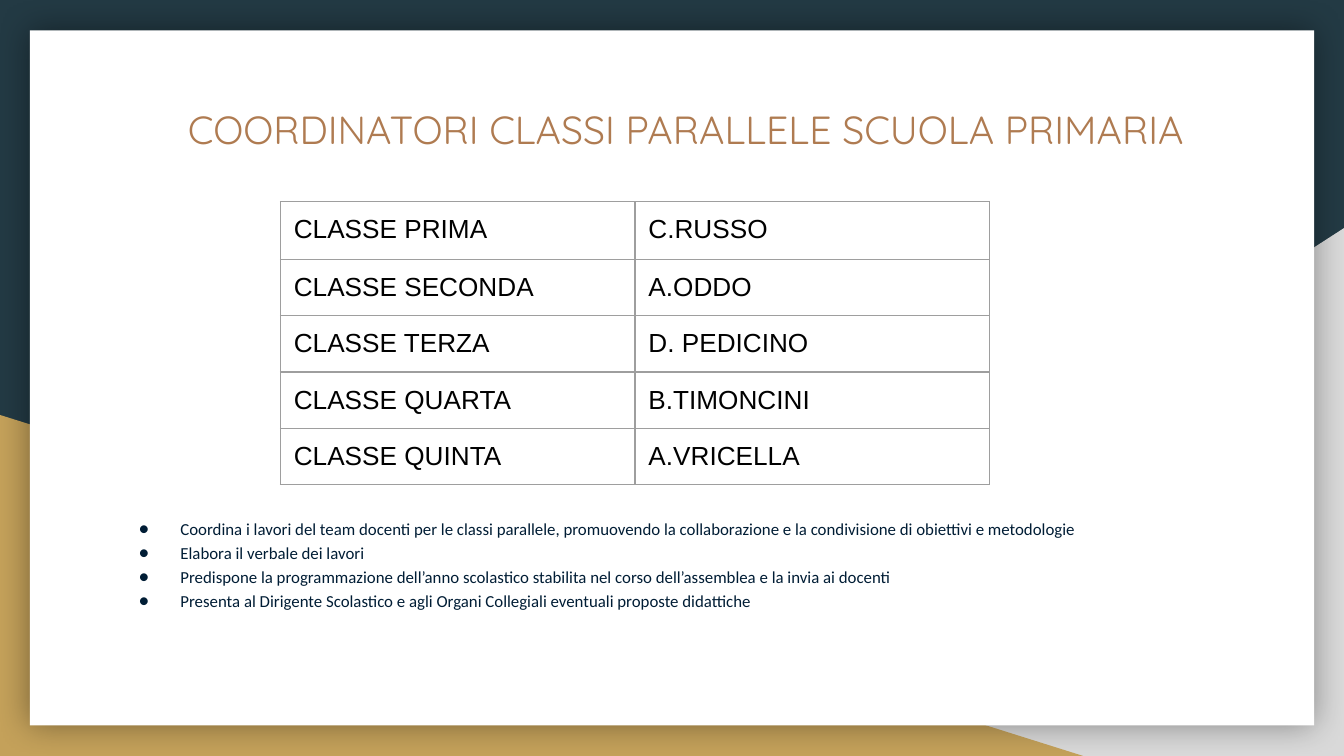
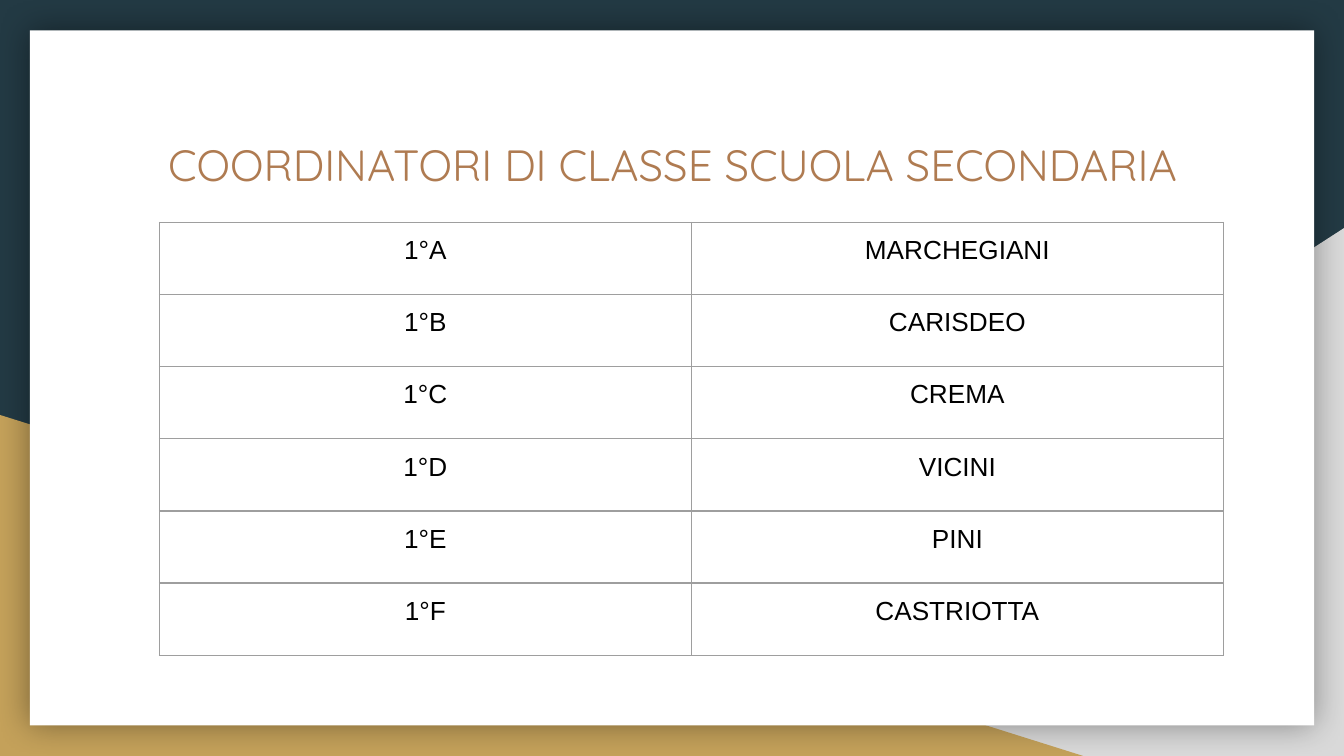
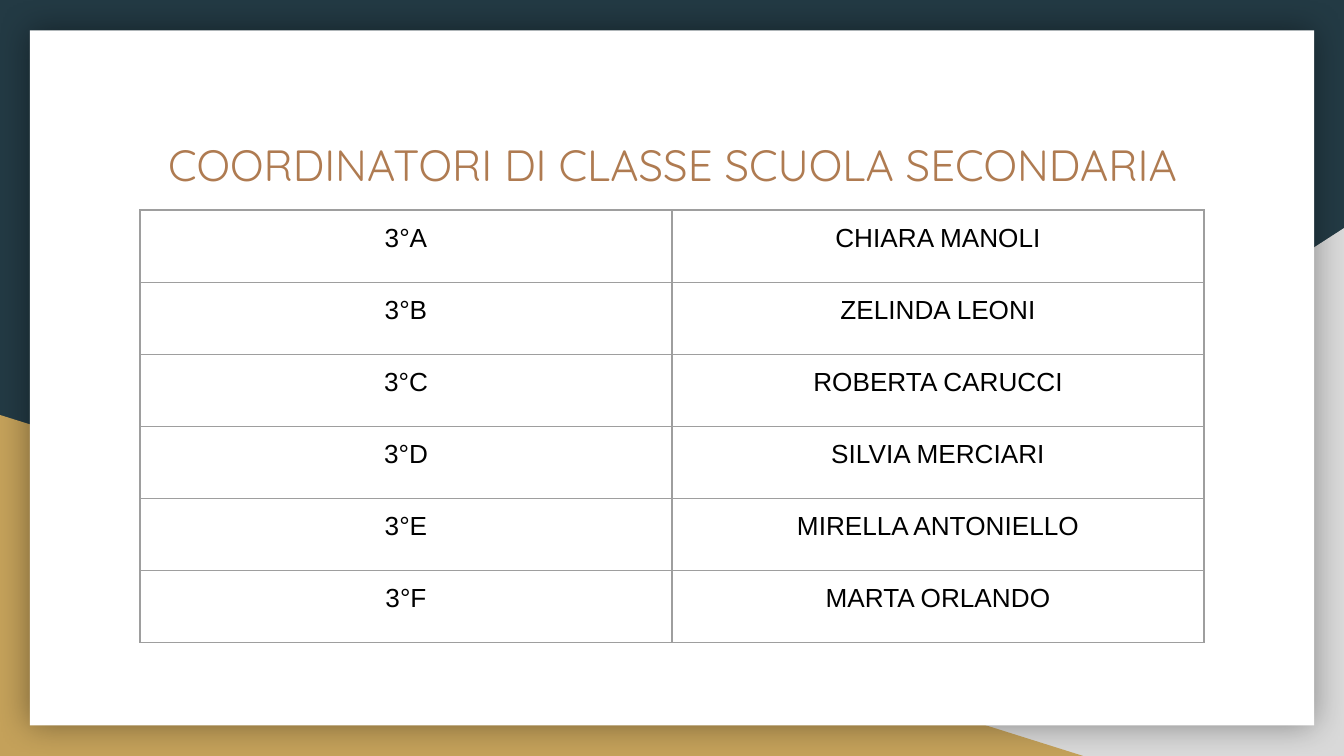
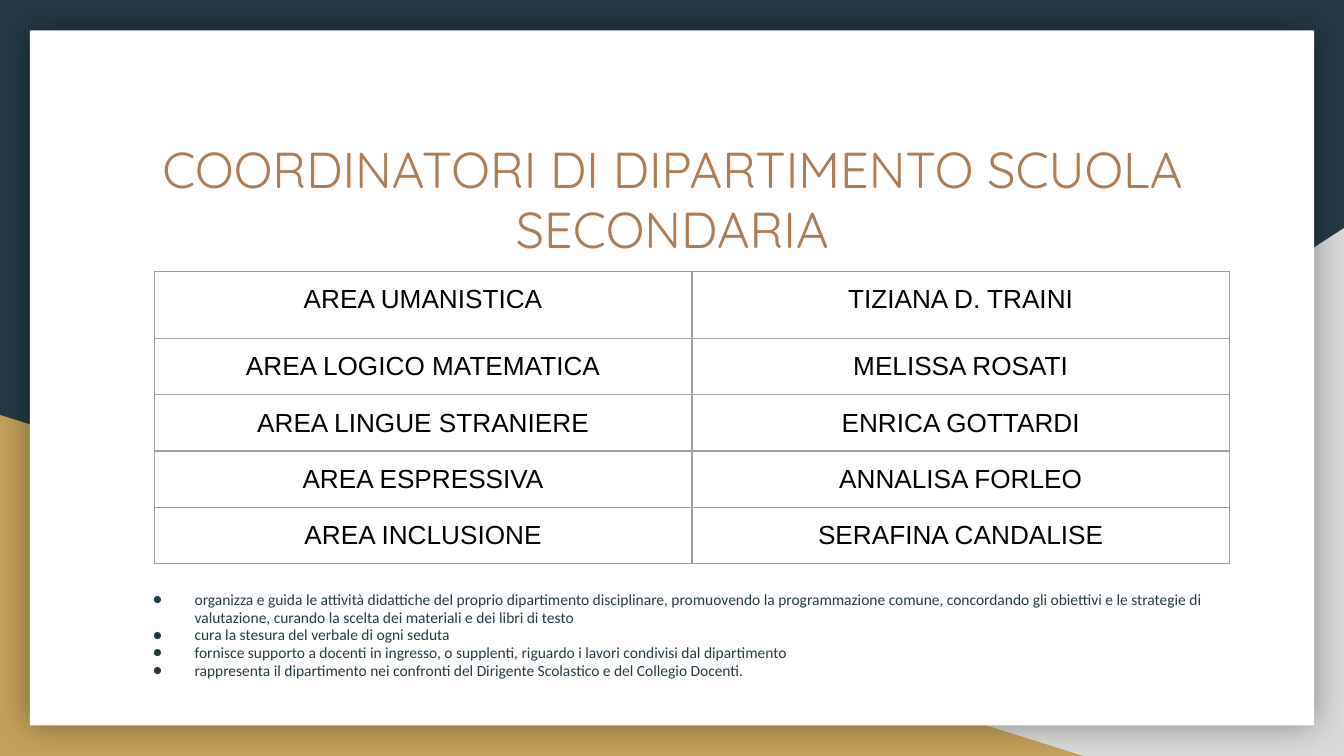
from lxml.etree import SubElement
from pptx import Presentation
from pptx.dml.color import RGBColor
from pptx.enum.shapes import MSO_SHAPE as SHAPE
from pptx.enum.text import PP_ALIGN as ALIGN
from pptx.oxml import parse_xml
from pptx.oxml.ns import nsdecls, qn
from pptx.util import Pt

NAVY = RGBColor(0x23, 0x3A, 0x44)
GREY = RGBColor(0xD9, 0xD9, 0xD9)
GOLD = RGBColor(0xC4, 0xA1, 0x5A)
WHITE = RGBColor(0xFF, 0xFF, 0xFF)
COPPER = RGBColor(0xAF, 0x7B, 0x51)
INK = RGBColor(0x00, 0x1D, 0x35)
BLACK = RGBColor(0, 0, 0)
BORDER = RGBColor(0x9E, 0x9E, 0x9E)

INSET = 7.2

# shape, left, top, width, height, colour
BACKDROP = [
    (SHAPE.RIGHT_TRIANGLE, 282.2, 122.2, 437.8, 282.8, GREY),
    (SHAPE.RIGHT_TRIANGLE, 0, 222.3, 580.3, 182.7, GOLD),
    (SHAPE.RECTANGLE, 16, 16.3, 688, 372.4, WHITE),
]

TITLE_BOX = (64.6, 66.6, 591, 74.9)
CLASS_TITLE = "COORDINATORI DI CLASSE SCUOLA SECONDARIA"

SLIDES = [
    dict(
        title="COORDINATORI CLASSI PARALLELE SCUOLA PRIMARIA",
        title_box=(71.8, 49, 591, 34.6), title_size=21,
        table_at=(150.2, 108), col_width=190, row_heights=[31] + [30.15] * 4,
        align=ALIGN.LEFT,
        rows=[("CLASSE PRIMA", "C.RUSSO"),
              ("CLASSE SECONDA", "A.ODDO"),
              ("CLASSE TERZA", "D. PEDICINO"),
              ("CLASSE QUARTA", "B.TIMONCINI"),
              ("CLASSE QUINTA", "A.VRICELLA")],
        duties_box=(53.6, 269, 609, 106.8),
        duties_size=9, duties_spacing=1.18, duties_color=INK,
        duties=[
            "Coordina i lavori del team docenti per le classi parallele, promuovendo "
            "la collaborazione e la condivisione di obiettivi e metodologie",
            "Elabora il verbale dei lavori",
            "Predispone la programmazione dell’anno scolastico stabilita nel corso "
            "dell’assemblea e la invia ai docenti",
            "Presenta al Dirigente Scolastico e agli Organi Collegiali eventuali "
            "proposte didattiche",
        ],
    ),
    dict(
        title=CLASS_TITLE, title_box=TITLE_BOX, title_size=23.4,
        table_at=(85.4, 119.2), col_width=285, row_heights=[38.65] * 6,
        align=ALIGN.CENTER,
        rows=[("1°A", "MARCHEGIANI"), ("1°B", "CARISDEO"), ("1°C", "CREMA"),
              ("1°D", "VICINI"), ("1°E", "PINI"), ("1°F", "CASTRIOTTA")],
    ),
    dict(
        title=CLASS_TITLE, title_box=TITLE_BOX, title_size=23.4,
        table_at=(75, 112.5), col_width=285, row_heights=[38.65] * 6,
        align=ALIGN.CENTER,
        rows=[("3°A", "CHIARA MANOLI"), ("3°B", "ZELINDA LEONI"),
              ("3°C", "ROBERTA CARUCCI"), ("3°D", "SILVIA MERCIARI"),
              ("3°E", "MIRELLA ANTONIELLO"), ("3°F", "MARTA ORLANDO")],
    ),
    dict(
        title="COORDINATORI DI DIPARTIMENTO SCUOLA SECONDARIA",
        title_box=TITLE_BOX, title_size=27,
        table_at=(82.7, 145.4), col_width=288, row_heights=[36.1] + [30.1] * 4,
        align=ALIGN.CENTER,
        rows=[("AREA UMANISTICA", "TIZIANA D. TRAINI"),
              ("AREA LOGICO MATEMATICA", "MELISSA ROSATI"),
              ("AREA LINGUE STRANIERE", "ENRICA GOTTARDI"),
              ("AREA ESPRESSIVA", "ANNALISA FORLEO"),
              ("AREA INCLUSIONE", "SERAFINA CANDALISE")],
        duties_box=(61.2, 309.6, 597.6, 61.9),
        duties_size=8.3, duties_spacing=0.95, duties_color=NAVY,
        duties=[
            "organizza e guida le attività didattiche del proprio dipartimento "
            "disciplinare, promuovendo la programmazione comune, concordando gli "
            "obiettivi e le strategie di valutazione, curando la scelta dei "
            "materiali e dei libri di testo",
            "cura la stesura del verbale di ogni seduta",
            "fornisce supporto a docenti in ingresso, o supplenti, riguardo i lavori "
            "condivisi dal dipartimento",
            "rappresenta il dipartimento nei confronti del Dirigente Scolastico e "
            "del Collegio Docenti.",
        ],
    ),
]


def add_text(slide, box, lines, font, size, color):
    """Add a wrapped text box with one paragraph per line; return its paragraphs."""
    tf = slide.shapes.add_textbox(*map(Pt, box)).text_frame
    tf.word_wrap = True
    tf.margin_left = tf.margin_right = Pt(INSET)
    tf.margin_top = tf.margin_bottom = Pt(INSET)
    tf.text = "\n".join(lines)
    for p in tf.paragraphs:
        style_run(p.runs[0], font, size, color)
    return tf.paragraphs


def style_run(r, font, size, color):
    r.font.name = font
    r.font.size = Pt(size)
    r.font.color.rgb = color


prs = Presentation()
prs.slide_width, prs.slide_height = Pt(720), Pt(405)

for page in SLIDES:
    slide = prs.slides.add_slide(prs.slide_layouts[6])
    slide.background.fill.solid()
    slide.background.fill.fore_color.rgb = NAVY

    for kind, *box, color in BACKDROP:
        sp = slide.shapes.add_shape(kind, *map(Pt, box))
        sp.shadow.inherit = False
        sp.fill.solid()
        sp.fill.fore_color.rgb = color
        sp.line.fill.background()
        if color == GREY:
            sp._element.spPr.xfrm.set("flipH", "1")
        if color == WHITE:
            sp._element.spPr.find(qn("a:effectLst")).append(parse_xml(
                f'<a:outerShdw {nsdecls("a")} blurRad="{Pt(18)}" dist="0" dir="0">'
                '<a:srgbClr val="000000"><a:alpha val="40000"/></a:srgbClr>'
                '</a:outerShdw>'))

    title = add_text(slide, page["title_box"], [page["title"]], "Quicksand",
                     page["title_size"], COPPER)[0]
    title.alignment = ALIGN.CENTER

    if "duties" in page:
        color = page["duties_color"]
        for p in add_text(slide, page["duties_box"], page["duties"], "Calibri",
                          page["duties_size"], color):
            p.line_spacing = page["duties_spacing"]
            pPr = p._p.get_or_add_pPr()
            pPr.set("marL", str(Pt(36)))
            pPr.set("indent", str(Pt(-22.3)))
            SubElement(SubElement(pPr, qn("a:buClr")), qn("a:srgbClr"), val=str(color))
            SubElement(pPr, qn("a:buFont"), typeface="Calibri")
            SubElement(pPr, qn("a:buChar"), char="●")

    heights = page["row_heights"]
    table = slide.shapes.add_table(
        len(heights), 2, *map(Pt, page["table_at"]),
        Pt(2 * page["col_width"]), Pt(sum(heights))).table
    table.first_row = table.horz_banding = False
    for row, height, texts in zip(table.rows, heights, page["rows"]):
        row.height = Pt(height)
        for cell, text in zip(row.cells, texts):
            cell.margin_left = cell.margin_right = cell.margin_top = Pt(INSET)
            cell.margin_bottom = Pt(5)  # lets the low rows keep their height
            p = cell.text_frame.paragraphs[0]
            p.text = text
            p.alignment = page["align"]
            style_run(p.runs[0], "Arial", 14, BLACK)
            tcPr = cell._tc.get_or_add_tcPr()
            for side in ("lnL", "lnR", "lnT", "lnB"):
                ln = SubElement(tcPr, qn(f"a:{side}"), w=str(Pt(0.75)))
                SubElement(SubElement(ln, qn("a:solidFill")), qn("a:srgbClr"),
                           val=str(BORDER))
            cell.fill.background()

prs.save("out.pptx")
